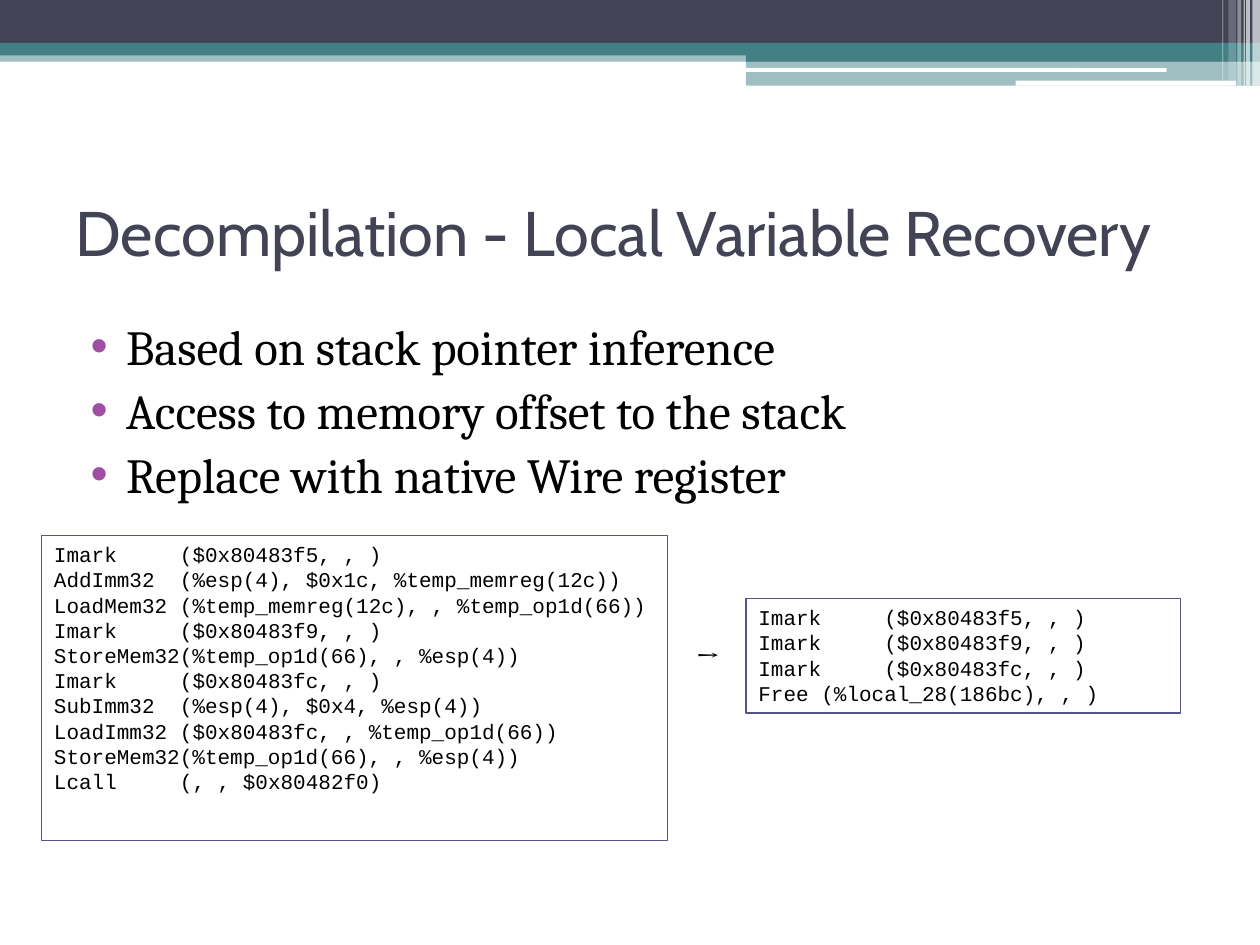
from typing import NamedTuple

from lxml import etree
from pptx import Presentation
from pptx.dml.color import RGBColor
from pptx.enum.shapes import MSO_SHAPE
from pptx.enum.text import MSO_ANCHOR, MSO_AUTO_SIZE, PP_ALIGN
from pptx.oxml.ns import qn
from pptx.util import Inches, Pt

RECT = MSO_SHAPE.RECTANGLE
ROUND = MSO_SHAPE.ROUNDED_RECTANGLE
TOP = MSO_ANCHOR.TOP
MIDDLE = MSO_ANCHOR.MIDDLE
LEFT = PP_ALIGN.LEFT
FIXED = MSO_AUTO_SIZE.NONE

COLORS = {
    "navy": "424456",
    "teal": "438086",
    "white": "FFFFFF",
    "black": "000000",
    "bullet": "A04DA3",
    "border": "53548A",
}


class Box(NamedTuple):
    left: float
    top: float
    width: float
    height: float


class Band(NamedTuple):
    box: Box
    color: str
    alpha: int = 100
    kind: int = RECT


class Style(NamedTuple):
    font: str
    size: int
    color: str = "black"


class Code(NamedTuple):
    box: Box
    wrap: bool
    lines: list[str]


HEAD = Style("Cabin", 36, "navy")
LIST = Style("Cambria", 28)
MONO = Style("Courier New", 12)
ARROW = Style("Cambria", 18)

BANDS = [
    Band(Box(0, 0.4, 10, 0.09), "teal", 50),
    Band(Box(0, 0, 10, 0.34), "navy"),
    Band(Box(0, 0.34, 10, 0.1), "teal"),
    Band(Box(5.92, 0.39, 4.08, 0.1), "teal"),
    Band(Box(5.92, 0.48, 4.08, 0.2), "teal", 50),
    Band(Box(5.91, 0.54, 3.35, 0.03), "white", kind=ROUND),
    Band(Box(8.06, 0.64, 1.75, 0.04), "white", kind=ROUND),
    Band(Box(9.94, 0, 0.06, 0.68), "white", 65),
    Band(Box(9.89, 0, 0.03, 0.68), "white", 65),
    Band(Box(9.87, 0, 0.01, 0.68), "white", 60),
    Band(Box(9.82, 0, 0.03, 0.68), "white", 40),
    Band(Box(9.75, 0, 0.06, 0.64), "white", 20),
    Band(Box(9.7, 0, 0.01, 0.64), "white", 30),
]

POINTS = [
    "Based on stack pointer inference",
    "Access to memory offset to the stack",
    "Replace with native Wire register",
]

CODES = [
    Code(Box(0.33, 4.25, 4.97, 2.42), True, [
        "Imark\t($0x80483f5, , )",
        "AddImm32\t(%esp(4), $0x1c, %temp_memreg(12c))",
        "LoadMem32\t(%temp_memreg(12c), , %temp_op1d(66))",
        "Imark\t($0x80483f9, , )",
        "StoreMem32(%temp_op1d(66), , %esp(4))",
        "Imark\t($0x80483fc, , )",
        "SubImm32\t(%esp(4), $0x4, %esp(4))",
        "LoadImm32\t($0x80483fc, , %temp_op1d(66))",
        "StoreMem32(%temp_op1d(66), , %esp(4))",
        "Lcall\t(, , $0x80482f0)",
    ]),
    Code(Box(5.92, 4.75, 3.45, 0.91), False, [
        "Imark\t($0x80483f5, , )",
        "Imark\t($0x80483f9, , )",
        "Imark\t($0x80483fc, , )",
        "Free\t(%local_28(186bc), , )",
    ]),
]


def rgb(name: str) -> RGBColor:
    return RGBColor.from_string(COLORS[name])


def span(box: Box) -> list[int]:
    return [Inches(side) for side in box]


def place(shape, box: Box) -> None:
    shape.left, shape.top, shape.width, shape.height = span(box)


def write(frame, lines: list[str], style: Style, anchor=TOP, wrap: bool = True) -> None:
    frame.auto_size = FIXED
    frame.word_wrap = wrap
    frame.vertical_anchor = anchor
    for i, line in enumerate(lines):
        para = frame.add_paragraph() if i else frame.paragraphs[0]
        para.alignment = LEFT
        run = para.add_run()
        run.text = line
        run.font.name = style.font
        run.font.size = Pt(style.size)
        run.font.color.rgb = rgb(style.color)


def add_band(slide, band: Band) -> None:
    shape = slide.shapes.add_shape(band.kind, *span(band.box))
    shape.shadow.inherit = False
    shape.line.fill.background()
    shape.fill.solid()
    shape.fill.fore_color.rgb = rgb(band.color)
    if band.alpha < 100:
        tone = shape.fill._xPr.find(".//" + qn("a:srgbClr"))
        etree.SubElement(tone, qn("a:alpha"), val=str(band.alpha * 1000))


def add_code(slide, code: Code) -> None:
    shape = slide.shapes.add_shape(RECT, *span(code.box))
    shape.shadow.inherit = False
    shape.fill.background()
    shape.line.color.rgb = rgb("border")
    shape.line.width = Pt(0.75)
    write(shape.text_frame, code.lines, MONO, wrap=code.wrap)


def add_bullet(para) -> None:
    para.space_before = Pt(3)
    props = para._p.get_or_add_pPr()
    props.set("marL", str(Inches(0.4)))
    props.set("indent", str(Inches(-0.28)))
    tint = etree.SubElement(props, qn("a:buClr"))
    etree.SubElement(tint, qn("a:srgbClr"), val=COLORS["bullet"])
    etree.SubElement(props, qn("a:buChar"), char="•")


def main() -> None:
    deck = Presentation()
    deck.slide_width, deck.slide_height = Inches(10), Inches(7.5)
    slide = deck.slides.add_slide(deck.slide_layouts[1])
    for band in BANDS:
        add_band(slide, band)

    title, body = slide.placeholders
    place(title, Box(0.5, 1.25, 9, 1.17))
    write(title.text_frame, ["Decompilation - Local Variable Recovery"], HEAD, MIDDLE)
    place(body, Box(0.5, 2.46, 9, 4.73))
    write(body.text_frame, POINTS, LIST)
    for para in body.text_frame.paragraphs:
        add_bullet(para)

    for code in CODES:
        add_code(slide, code)
    arrow = slide.shapes.add_textbox(*span(Box(5.42, 5, 0.45, 0.4)))
    write(arrow.text_frame, ["→"], ARROW, wrap=False)
    deck.save("out.pptx")


if __name__ == "__main__":
    main()
